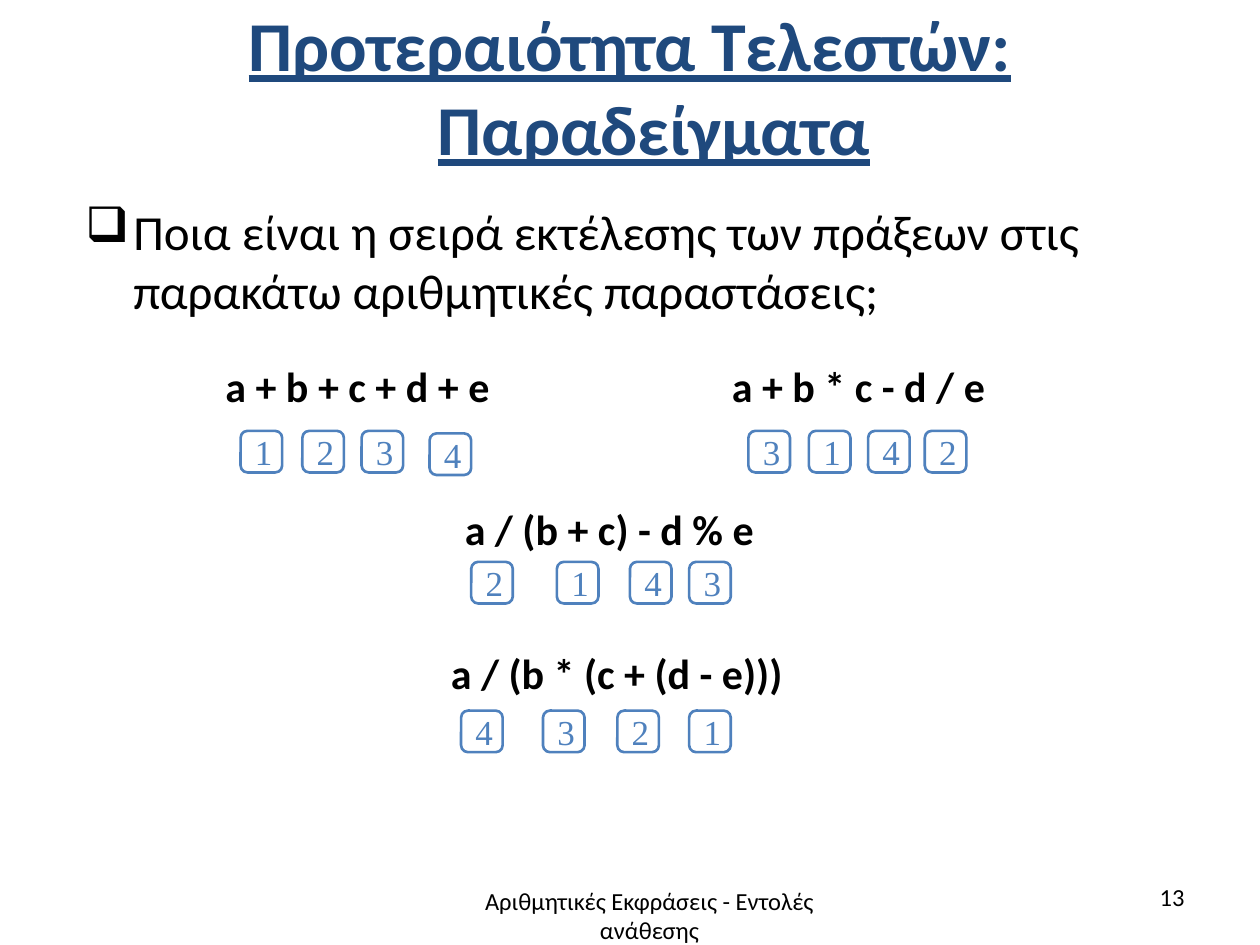
from dataclasses import dataclass

from lxml.etree import SubElement
from pptx import Presentation
from pptx.dml.color import RGBColor as Color
from pptx.enum.shapes import MSO_SHAPE as Shape
from pptx.enum.text import MSO_ANCHOR as Anchor, MSO_AUTO_SIZE as AutoSize, PP_ALIGN as Align
from pptx.oxml.ns import qn
from pptx.util import Pt

EMU_PER_PX = 9144
BADGE_SIZE = 33


@dataclass(frozen=True)
class Theme:
    """Colours, fonts and type sizes of the slide."""
    navy: Color = Color(0x1F, 0x49, 0x7D)
    blue: Color = Color(0x4F, 0x81, 0xBD)
    black: Color = Color(0, 0, 0)
    body_font: str = "Calibri"
    badge_font: str = "Times New Roman"
    title: int = 40
    question: int = 28
    expression: int = 24
    badge: int = 20
    footer: int = 14


THEME = Theme()

EXPRESSIONS = [
    ("a + b + c + d + e", (169, 281, 232, 50),
     [("1", 22, 61), ("2", 71, 61), ("3", 118, 61), ("4", 172, 63)]),
    ("a + b * c - d / e", (571, 281, 223, 50),
     [("3", 23, 61), ("1", 71, 61), ("4", 118, 61), ("2", 163, 61)]),
    ("a / (b + c) - d % e", (359, 395, 252, 50),
     [("2", 15, 51), ("1", 83, 51), ("4", 141, 51), ("3", 188, 51)]),
    ("a / (b * (c + (d - e)))", (348, 509, 286, 50),
     [("4", 18, 55), ("3", 83, 55), ("2", 142, 55), ("1", 199, 55)]),
]


def px(*lengths):
    """Turn px lengths into a list of EMU."""
    return [length * EMU_PER_PX for length in lengths]


def apply_format(target, values):
    """Set each named attribute on the target."""
    for name, value in values.items():
        setattr(target, name, value)


def write_text(shape, text, size, frame=None, layout=None, font=None, color=THEME.black):
    """Write one formatted paragraph into a shape and return it."""
    apply_format(shape.text_frame, {"word_wrap": True, **(frame or {})})
    paragraph = shape.text_frame.paragraphs[0]
    apply_format(paragraph, {"alignment": Align.LEFT, **(layout or {})})
    run = paragraph.add_run()
    run.text = text
    apply_format(run.font, {"name": THEME.body_font, "size": Pt(size), **(font or {})})
    run.font.color.rgb = color
    return paragraph


def set_hanging_indent(paragraph, indent, bullet=None):
    """Hang the first line by the indent, with a bullet if one is given."""
    properties = paragraph._p.get_or_add_pPr()
    (length,) = px(indent)
    properties.set("marL", str(length))
    properties.set("indent", str(-length))
    if bullet:
        SubElement(properties, qn("a:buChar")).set("char", bullet)


def add_title(slide, box):
    """Place the underlined slide title."""
    paragraph = write_text(
        slide.shapes.add_textbox(*px(*box)), "Προτεραιότητα Τελεστών: Παραδείγματα", THEME.title,
        frame={"vertical_anchor": Anchor.MIDDLE},
        layout={"alignment": Align.CENTER, "space_before": Pt(8)},
        font={"bold": True, "underline": True}, color=THEME.navy)
    set_hanging_indent(paragraph, 38)


def add_question(slide, box):
    """Place the bulleted question."""
    paragraph = write_text(
        slide.shapes.add_textbox(*px(*box)),
        "Ποια είναι η σειρά εκτέλεσης των πράξεων στις παρακάτω αριθμητικές παραστάσεις;",
        THEME.question, layout={"space_before": Pt(12)})
    set_hanging_indent(paragraph, 38, "❑")


def add_badge(slide, box, number):
    """Place one outlined badge with its order number."""
    badge = slide.shapes.add_shape(Shape.ROUNDED_RECTANGLE, *px(*box))
    badge.shadow.inherit = False
    badge.fill.background()
    badge.line.color.rgb = THEME.blue
    badge.line.width = Pt(1.5)
    write_text(badge, number, THEME.badge,
               frame={"word_wrap": False, "vertical_anchor": Anchor.MIDDLE},
               font={"name": THEME.badge_font}, color=THEME.blue)


def add_expression(slide, box, expression, badges):
    """Place an expression with the order badges below its operators."""
    write_text(slide.shapes.add_textbox(*px(*box)), expression, THEME.expression,
               frame={"word_wrap": False, "auto_size": AutoSize.SHAPE_TO_FIT_TEXT},
               font={"bold": True})
    left, top = box[:2]
    for number, across, down in badges:
        add_badge(slide, (left + across, top + down, BADGE_SIZE, BADGE_SIZE), number)


def add_footer(slide, box, text, alignment):
    """Place one footer text."""
    write_text(slide.shapes.add_textbox(*px(*box)), text, THEME.footer,
               layout={"alignment": alignment})


def main():
    """Build and save the slide."""
    presentation = Presentation()
    presentation.slide_width, presentation.slide_height = px(1000, 750)
    slide = presentation.slides.add_slide(presentation.slide_layouts[6])
    add_title(slide, (50, -3, 900, 142))
    add_question(slide, (58, 155, 850, 98))
    for expression, box, badges in EXPRESSIONS:
        add_expression(slide, box, expression, badges)
    add_footer(slide, (341, 698, 349, 55), "Αριθμητικές Εκφράσεις - Εντολές ανάθεσης", Align.CENTER)
    add_footer(slide, (717, 695, 233, 40), "13", Align.RIGHT)
    presentation.save("out.pptx")


if __name__ == "__main__":
    main()
